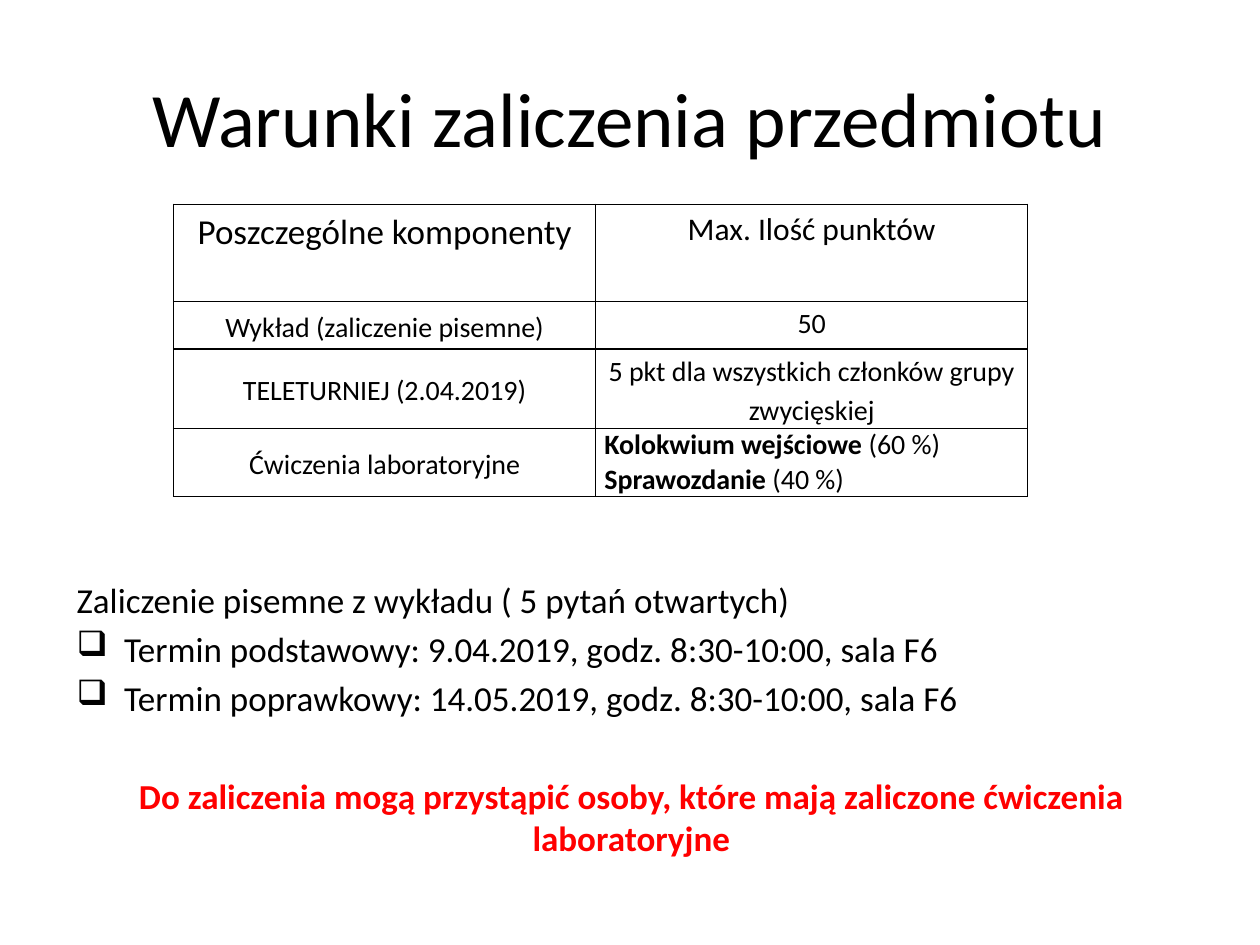
from lxml import etree
from pptx import Presentation
from pptx.dml.color import RGBColor
from pptx.enum.text import MSO_ANCHOR, PP_ALIGN
from pptx.oxml.ns import qn
from pptx.util import Pt

LEFT, CENTER = PP_ALIGN.LEFT, PP_ALIGN.CENTER
TOP, MIDDLE = MSO_ANCHOR.TOP, MSO_ANCHOR.MIDDLE
FONT = "Calibri"
COLORS = {"text": "000000", "warning": "FF0000", "border": "000000"}
COL_WIDTHS = (241.2, 246.8)
ROW_HEIGHTS = (55.4, 27.4, 45.2, 39)
ROWS = [
    ("Poszczególne komponenty", "Max. Ilość punktów"),
    ("Wykład (zaliczenie pisemne)", "50"),
    ("TELETURNIEJ (2.04.2019)", "5 pkt dla wszystkich członków grupy zwycięskiej"),
    ("Ćwiczenia laboratoryjne", None),
]
LAB_PARTS = [("Kolokwium wejściowe ", "(60 %)"), ("Sprawozdanie", " (40 %)")]
EXAM_TITLE = "Zaliczenie pisemne z wykładu ( 5 pytań otwartych)"
EXAM_DATES = [
    "Termin podstawowy: 9.04.2019, godz. 8:30-10:00, sala F6",
    "Termin poprawkowy: 14.05.2019, godz. 8:30-10:00, sala F6",
]
WARNING = "Do zaliczenia mogą przystąpić osoby, które mają zaliczone ćwiczenia laboratoryjne"


def add_run(p, text, size, bold=False, color="text"):
    """Add one formatted run to a paragraph."""
    r = p.add_run()
    r.text = text
    r.font.name = FONT
    r.font.size = Pt(size)
    r.font.bold = bold
    r.font.color.rgb = RGBColor.from_string(COLORS[color])


def next_paragraph(tf, first):
    """Return the first paragraph of a frame or a new one."""
    return tf.paragraphs[0] if first else tf.add_paragraph()


def add_text_box(slide, x, y, w, h, anchor):
    """Add a wrapping text box and return its frame."""
    tf = slide.shapes.add_textbox(Pt(x), Pt(y), Pt(w), Pt(h)).text_frame
    tf.word_wrap = True
    tf.vertical_anchor = anchor
    return tf


def set_hanging(p, indent, bullet=None):
    """Give a paragraph a hanging indent and an optional bullet."""
    pPr = p._p.get_or_add_pPr()
    pPr.set("marL", str(Pt(indent)))
    pPr.set("indent", str(-Pt(indent)))
    if bullet:
        etree.SubElement(pPr, qn("a:buChar"), char=bullet)


def style_cell(cell, anchor):
    """Set the borders, margins and empty fill of a table cell."""
    tcPr = cell._tc.get_or_add_tcPr()
    for side in ("lnL", "lnR", "lnT", "lnB"):
        ln = etree.SubElement(tcPr, qn(f"a:{side}"), w=str(Pt(1)))
        fill = etree.SubElement(ln, qn("a:solidFill"))
        etree.SubElement(fill, qn("a:srgbClr"), val=COLORS["border"])
    cell.fill.background()
    cell.margin_left = cell.margin_right = Pt(5)
    cell.margin_top = cell.margin_bottom = Pt(0)
    cell.vertical_anchor = anchor


def build_title(slide, x, y, w, h):
    """Place the centred slide title."""
    p = add_text_box(slide, x, y, w, h, MIDDLE).paragraphs[0]
    p.alignment = CENTER
    add_run(p, "Warunki zaliczenia przedmiotu", 44)


def build_table(slide, x, y):
    """Place the table of course components and points."""
    frame = slide.shapes.add_table(len(ROWS), len(COL_WIDTHS), Pt(x), Pt(y),
                                   Pt(sum(COL_WIDTHS)), Pt(sum(ROW_HEIGHTS)))
    table = frame.table
    table.first_row = table.horz_banding = False
    for col, width in zip(table.columns, COL_WIDTHS):
        col.width = Pt(width)
    for i, (row, height) in enumerate(zip(table.rows, ROW_HEIGHTS)):
        row.height = Pt(height)
        for j, text in enumerate(ROWS[i]):
            cell = table.cell(i, j)
            style_cell(cell, MIDDLE if i and j == 0 else TOP)
            if text:
                p = cell.text_frame.paragraphs[0]
                p.alignment = CENTER
                p.line_spacing = 1.15
                add_run(p, text, 16 if i else (20, 18)[j])
    tf = table.cell(len(ROWS) - 1, 1).text_frame
    for i, (name, share) in enumerate(LAB_PARTS):
        p = next_paragraph(tf, i == 0)
        p.alignment = LEFT
        add_run(p, name, 16, bold=True)
        add_run(p, share, 16)


def build_exam_info(slide, x, y, w, h):
    """Place the exam dates and the admission warning."""
    tf = add_text_box(slide, x, y, w, h, TOP)
    for i, text in enumerate([EXAM_TITLE] + EXAM_DATES):
        p = next_paragraph(tf, i == 0)
        set_hanging(p, 27, "❑" if i else None)
        if i:
            p.space_before = Pt(4)
        add_run(p, text, 20)
    p = tf.add_paragraph()
    p.alignment = CENTER
    p.space_before = Pt(32)
    add_run(p, WARNING, 20, bold=True, color="warning")


def main():
    """Build the slide and save it."""
    prs = Presentation()
    prs.slide_width, prs.slide_height = Pt(720), Pt(540)
    slide = prs.slides.add_slide(prs.slide_layouts[6])
    build_title(slide, 36, 21.6, 648, 90)
    build_table(slide, 99.2, 116.8)
    build_exam_info(slide, 36.8, 327, 648, 178)
    prs.save("out.pptx")


if __name__ == "__main__":
    main()
